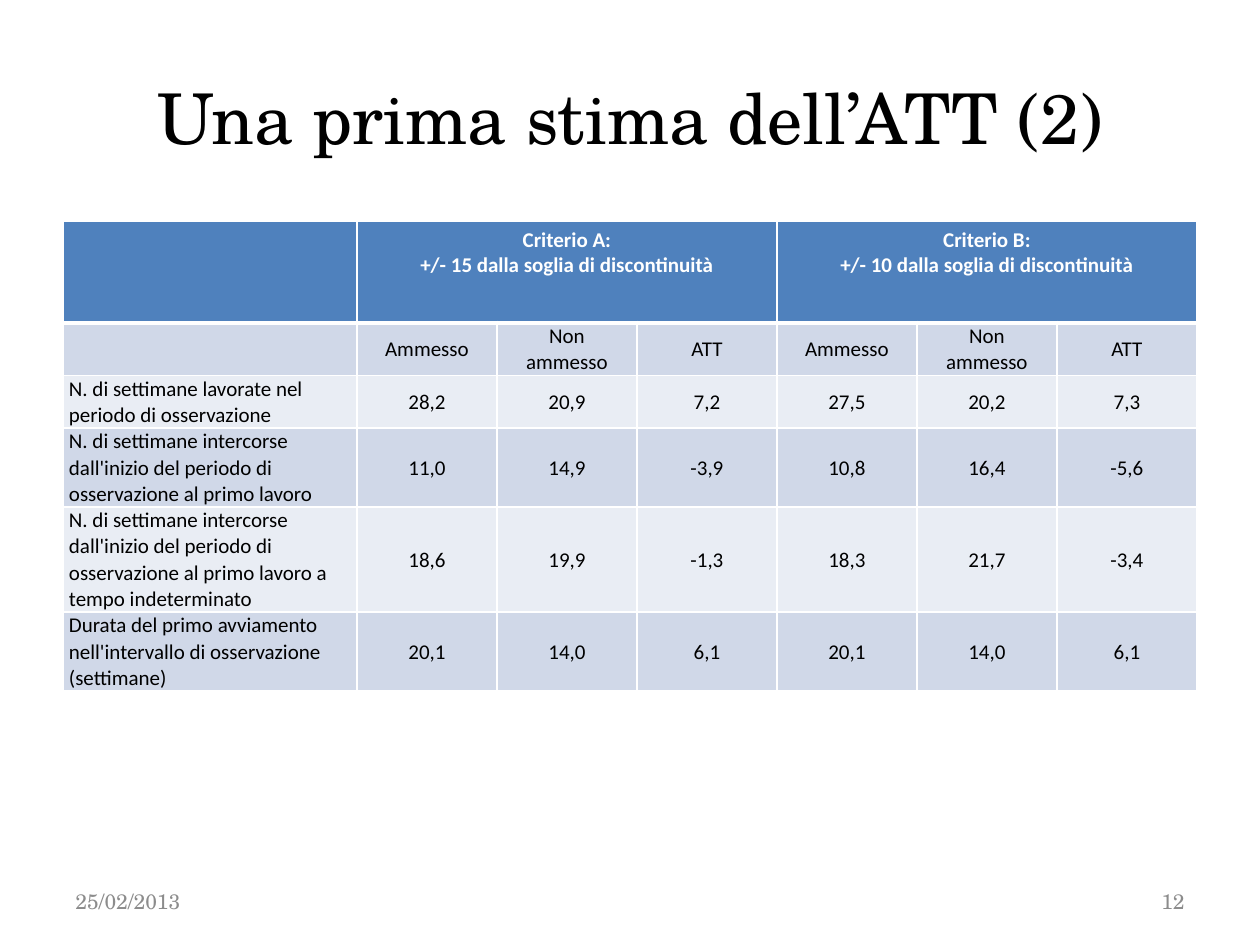
from dataclasses import dataclass

from lxml import etree
from pptx import Presentation
from pptx.dml.color import RGBColor
from pptx.enum.text import MSO_ANCHOR, PP_ALIGN
from pptx.oxml.ns import qn
from pptx.util import Emu, Pt

LEFT, MID, RIGHT = PP_ALIGN.LEFT, PP_ALIGN.CENTER, PP_ALIGN.RIGHT
TOP, CENTER, BOTTOM = MSO_ANCHOR.TOP, MSO_ANCHOR.MIDDLE, MSO_ANCHOR.BOTTOM
SCALE = 914400 / 126


@dataclass(frozen=True)
class Theme:
    serif: str = "TeX Gyre Schola"
    sans: str = "Calibri"
    ink: str = "000000"
    white: str = "FFFFFF"
    gray: str = "8C8C8C"
    head: str = "4F81BD"
    bands: tuple = ("D0D8E8", "E9EDF4")
    title: int = 40
    body: int = 12
    lead: int = 15
    thin: int = 1
    thick: int = 3


THEME = Theme()
COLS = [294] + [140] * 6
ROWS = [102, 52, 52, 79, 105, 79]
HEADS = [
    "Criterio A:\n+/- 15 dalla soglia di discontinuità",
    "Criterio B:\n+/- 10 dalla soglia di discontinuità",
]
GROUP = ["Ammesso", "Non\nammesso", "ATT"]
DATA = [
    [""] + GROUP * 2,
    ["N. di settimane lavorate nel periodo di osservazione",
     "28,2", "20,9", "7,2", "27,5", "20,2", "7,3"],
    ["N. di settimane intercorse dall'inizio del periodo di osservazione al primo lavoro",
     "11,0", "14,9", "-3,9", "10,8", "16,4", "-5,6"],
    ["N. di settimane intercorse dall'inizio del periodo di osservazione al primo lavoro "
     "a tempo indeterminato",
     "18,6", "19,9", "-1,3", "18,3", "21,7", "-3,4"],
    ["Durata del primo avviamento nell'intervallo di osservazione (settimane)",
     "20,1", "14,0", "6,1", "20,1", "14,0", "6,1"],
]


def px(n):
    return Emu(round(n * SCALE))


def write(frame, text, align, face, size, color, bold=False, lead=None):
    frame.text = text
    for para in frame.paragraphs:
        para.alignment = align
        if lead:
            para.line_spacing = Pt(lead)
        font = para.font
        font.name, font.size, font.bold = face, Pt(size), bold
        font.color.rgb = RGBColor.from_string(color)


def add_label(slide, box, text, align, size, color):
    frame = slide.shapes.add_textbox(*map(px, box)).text_frame
    frame.word_wrap = True
    frame.vertical_anchor = CENTER
    write(frame, text, align, THEME.serif, size, color)


def add_edge(cell, side, width):
    line = etree.SubElement(cell._tc.get_or_add_tcPr(), qn("a:ln" + side), w=str(Pt(width)))
    fill = etree.SubElement(line, qn("a:solidFill"))
    etree.SubElement(fill, qn("a:srgbClr"), val=THEME.white)


def paint(cell, row):
    heavy = {0: "B", 1: "T"}.get(row)
    for side in "LRTB":
        add_edge(cell, side, THEME.thick if side == heavy else THEME.thin)
    color = THEME.bands[(row - 1) % 2] if row else THEME.head
    cell.fill.solid()
    cell.fill.fore_color.rgb = RGBColor.from_string(color)


def fill_head(table):
    for i, text in enumerate(HEADS):
        first = 1 + i * len(GROUP)
        cell = table.cell(0, first)
        cell.merge(table.cell(0, first + len(GROUP) - 1))
        write(cell.text_frame, text, MID, THEME.sans, THEME.body, THEME.white, True)


def fill_body(table):
    for r, row in enumerate(DATA, 1):
        for c, text in enumerate(row):
            if not text:
                continue
            cell = table.cell(r, c)
            cell.margin_left = cell.margin_right = px(6)
            cell.margin_top = cell.margin_bottom = 0
            cell.vertical_anchor = BOTTOM if (r, c) == (2, 0) else CENTER
            write(cell.text_frame, text, MID if c else LEFT, THEME.sans,
                  THEME.body, THEME.ink, lead=THEME.lead)


def add_grid(slide, left, top):
    box = map(px, (left, top, sum(COLS), sum(ROWS)))
    table = slide.shapes.add_table(len(ROWS), len(COLS), *box).table
    for col, width in zip(table.columns, COLS):
        col.width = px(width)
    for r, (row, height) in enumerate(zip(table.rows, ROWS)):
        row.height = px(height)
        for cell in row.cells:
            paint(cell, r)
    fill_head(table)
    fill_body(table)


def main():
    deck = Presentation()
    deck.slide_width, deck.slide_height = px(1260), px(945)
    slide = deck.slides.add_slide(deck.slide_layouts[6])
    add_label(slide, (63, 38, 1134, 158), "Una prima stima dell’ATT (2)",
              MID, THEME.title, THEME.ink)
    add_grid(slide, 63, 221)
    add_label(slide, (63, 876, 294, 50), "25/02/2013", LEFT, THEME.body, THEME.gray)
    add_label(slide, (903, 876, 294, 50), "12", RIGHT, THEME.body, THEME.gray)
    deck.save("out.pptx")


if __name__ == "__main__":
    main()
